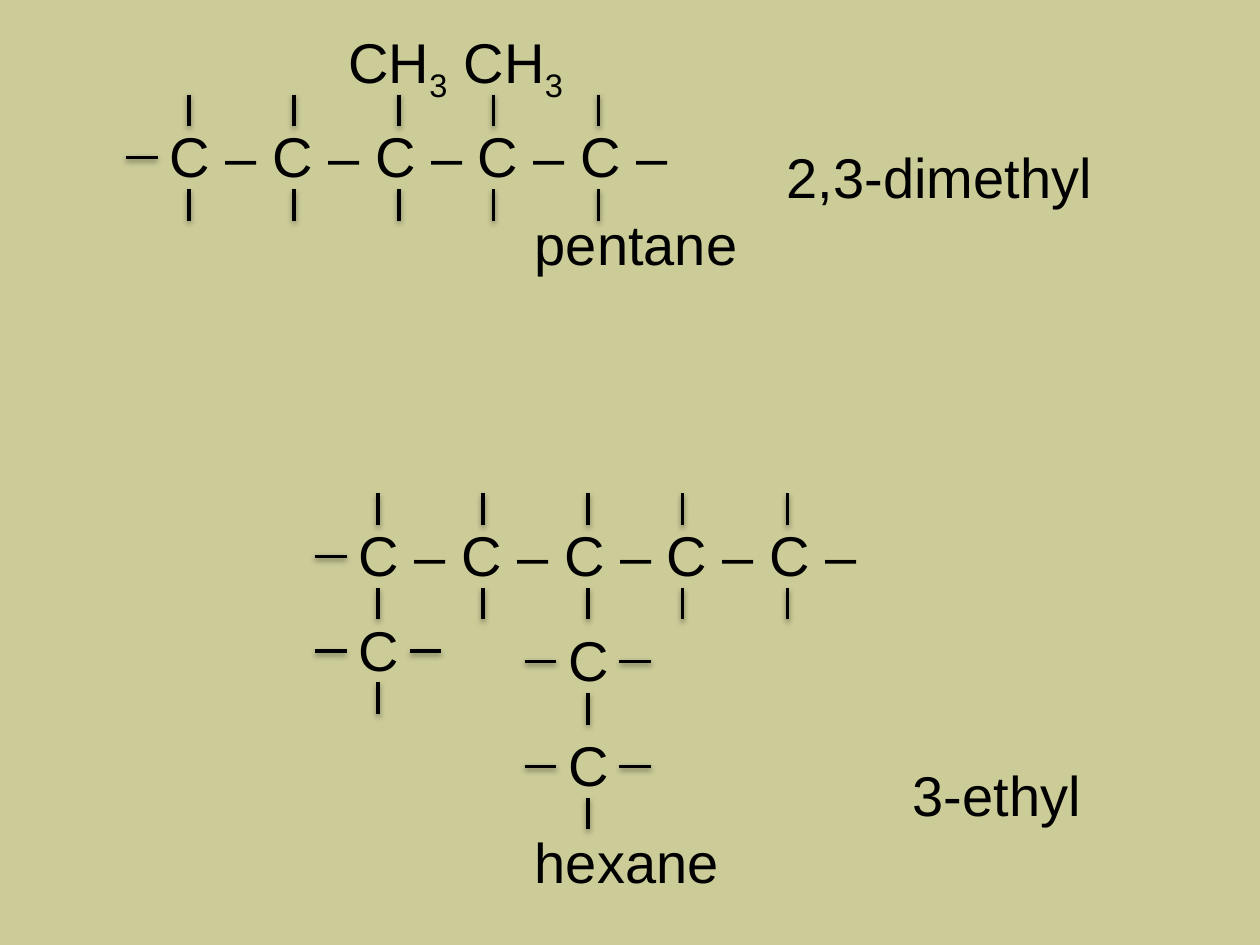
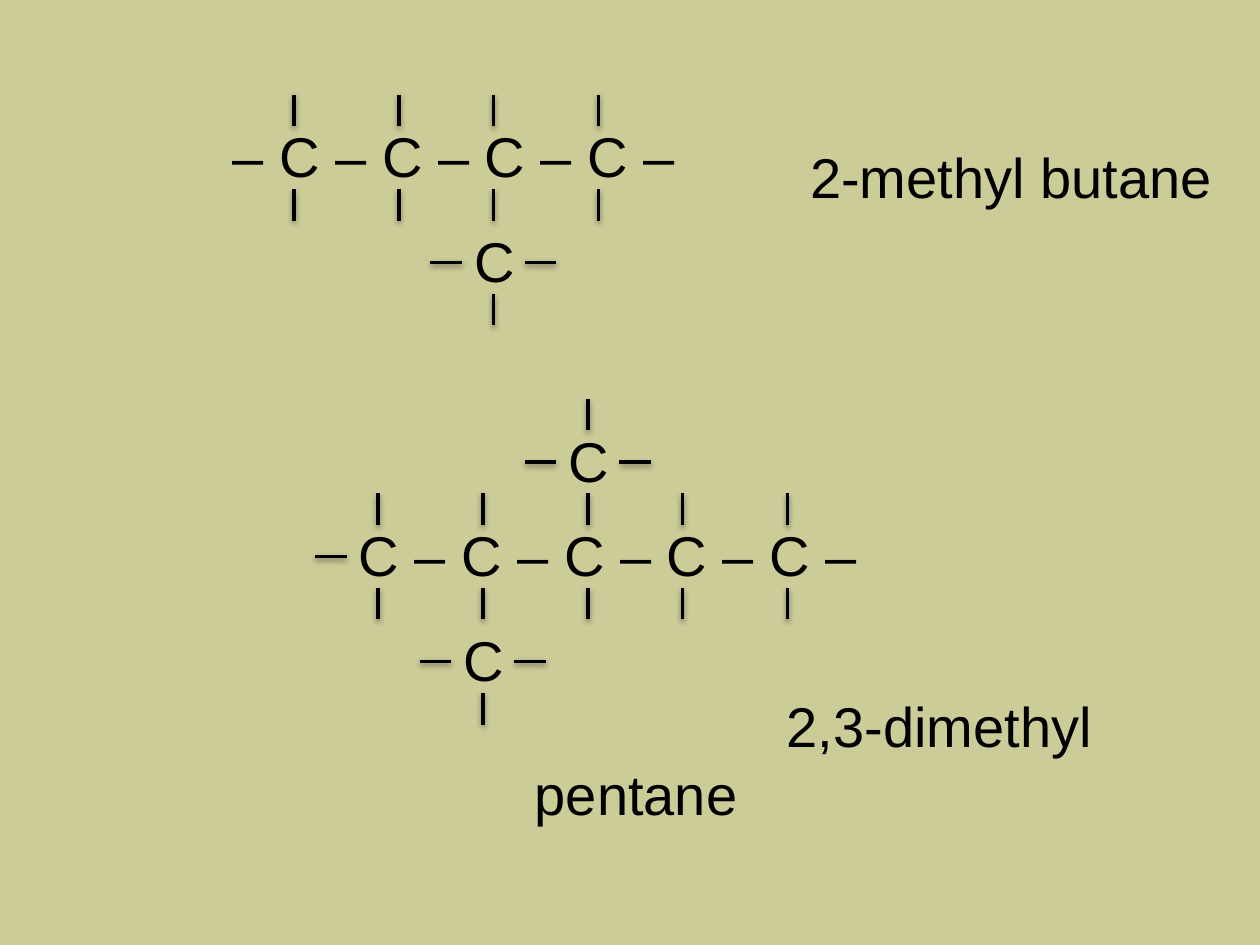
from lxml import etree
from pptx import Presentation
from pptx.dml.color import RGBColor
from pptx.enum.shapes import MSO_CONNECTOR
from pptx.enum.text import MSO_AUTO_SIZE
from pptx.oxml.ns import qn
from pptx.util import Cm, Pt

STRAIGHT = MSO_CONNECTOR.STRAIGHT
GROW = MSO_AUTO_SIZE.SHAPE_TO_FIT_TEXT

BACKGROUND = "CCCC99"
INK = "000000"
FONT = "Arial"
FONT_SIZE = Pt(32)

# Places are counted in twelfths of an inch.
UNIT = 2.54 / 12
BOND = 3
TEXT_HEIGHT = 7.68
CARBON_WIDTH, METHYL_WIDTH = 6.36, 12.24
NAME_LEFT, NAME_WIDTH = 43, 77
NAME_MARGIN = Cm(1.43)
# Bonds around a carbon, measured from the top of its text
ABOVE, BESIDE, BELOW = -2, 4, 7

PENTANE_CHAIN = {
    "text": "C – C – C – C – C –", "left": 33, "top": 49, "width": 50.28,
    "columns": [36, 46, 56, 65, 75], "left_bond": True,
}
# Branches are (left, top, side of the free vertical bond).
# Names are (text, top, first-line indent in cm).
SLIDES = [
    {
        "chains": [
            {"text": "C – C – C – C – C –", "left": 15, "top": 11, "width": 50.28,
             "columns": [18, 28, 38, 47, 57], "left_bond": True},
            PENTANE_CHAIN,
        ],
        "methyls": [(32, 2), (43, 2)],
        "branches": [(33, 58, BELOW), (53, 59, BELOW), (53, 69, BELOW)],
        "names": [("2,3-dimethyl pentane", 13, 5.08), ("3-ethyl hexane", 71.8, 7.62)],
    },
    {
        "chains": [
            {"text": "– C – C – C – C –", "left": 21, "top": 11, "width": 45,
             "columns": [28, 38, 47, 57], "left_bond": False},
            PENTANE_CHAIN,
        ],
        "methyls": [],
        "branches": [(44, 21, BELOW), (43, 59, BELOW), (53, 40, ABOVE)],
        "names": [("2-methyl butane", 13, 5.55), ("2,3-dimethyl pentane", 65.3, 5.08)],
    },
]


def grid(count):
    return Cm(count * UNIT)


def color(value):
    return RGBColor.from_string(value)


def add_text(slide, text, left, top, width, height=TEXT_HEIGHT, wrap=False):
    box = slide.shapes.add_textbox(grid(left), grid(top), grid(width), grid(height))
    frame = box.text_frame
    frame.word_wrap = wrap
    frame.auto_size = GROW
    paragraph = frame.paragraphs[0]
    paragraph.add_run().text = text
    paragraph.font.name = FONT
    paragraph.font.size = FONT_SIZE
    paragraph.font.color.rgb = color(INK)
    return paragraph


def add_bond(slide, left, top, vertical):
    right, bottom = (left, top + BOND) if vertical else (left + BOND, top)
    bond = slide.shapes.add_connector(
        STRAIGHT, grid(left), grid(top), grid(right), grid(bottom))
    bond.line.color.rgb = color(INK)
    bond.line.width = Pt(2)
    effects = etree.SubElement(bond._element.spPr, qn("a:effectLst"))
    shadow = etree.SubElement(effects, qn("a:outerShdw"), blurRad="40000",
                              dist="20000", dir="5400000", rotWithShape="0")
    shade = etree.SubElement(shadow, qn("a:srgbClr"), val=INK)
    etree.SubElement(shade, qn("a:alpha"), val="38000")


def add_chain(slide, chain):
    left, top = chain["left"], chain["top"]
    add_text(slide, chain["text"], left, top, chain["width"])
    for column in chain["columns"]:
        for side in (ABOVE, BELOW):
            add_bond(slide, column, top + side, vertical=True)
    if chain["left_bond"]:
        add_bond(slide, left - BOND, top + BESIDE, vertical=False)


def add_branch(slide, left, top, free_side):
    add_text(slide, "C", left, top, CARBON_WIDTH)
    add_bond(slide, left + 3, top + free_side, vertical=True)
    for bond_left in (left - BOND, left + 6):
        add_bond(slide, bond_left, top + BESIDE, vertical=False)


def add_methyl(slide, left, top):
    paragraph = add_text(slide, "CH", left, top, METHYL_WIDTH)
    subscript = paragraph.add_run()
    subscript.text = "3"
    subscript.font._element.set("baseline", "-25000")


def add_name(slide, text, top, indent):
    """Add a compound name whose second line starts further left than its first."""
    paragraph = add_text(slide, text, NAME_LEFT, top, NAME_WIDTH, 2 * TEXT_HEIGHT, wrap=True)
    properties = paragraph._p.get_or_add_pPr()
    properties.set("marL", str(NAME_MARGIN))
    properties.set("indent", str(Cm(indent)))


def main():
    presentation = Presentation()
    presentation.slide_width = Cm(25.4)
    presentation.slide_height = Cm(19.05)
    for content in SLIDES:
        slide = presentation.slides.add_slide(presentation.slide_layouts[6])
        slide.background.fill.solid()
        slide.background.fill.fore_color.rgb = color(BACKGROUND)
        for name in content["names"]:
            add_name(slide, *name)
        for chain in content["chains"]:
            add_chain(slide, chain)
        for methyl in content["methyls"]:
            add_methyl(slide, *methyl)
        for branch in content["branches"]:
            add_branch(slide, *branch)
    presentation.save("out.pptx")


if __name__ == "__main__":
    main()
